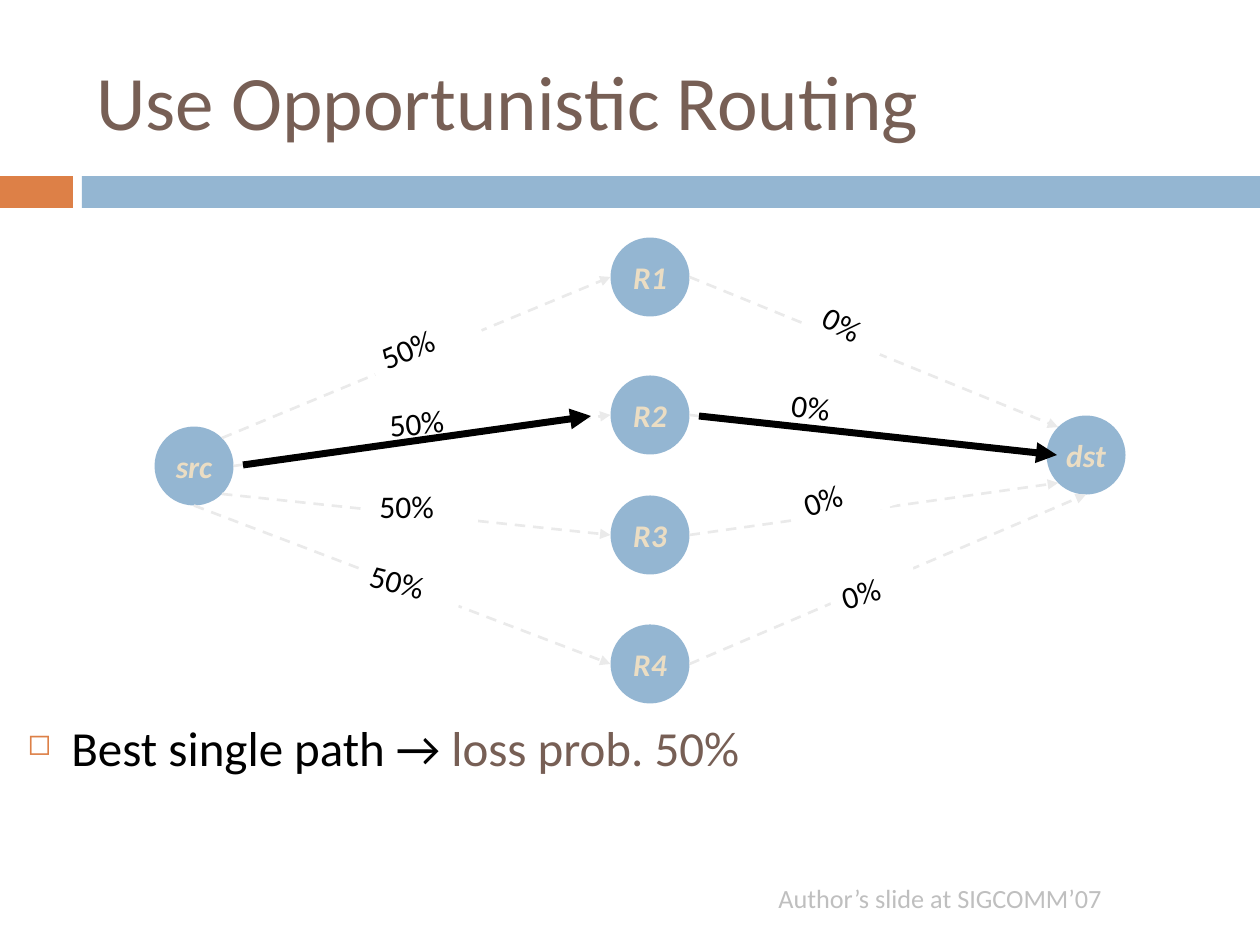
import math
from lxml import etree
from pptx import Presentation
from pptx import util as u
from pptx.dml.color import RGBColor
from pptx.enum import dml, shapes, text
from pptx.oxml.ns import qn

FONT = "Calibri"
BLUE, ORANGE, BROWN, CREAM = "94B6D2", "DD8047", "775F55", "EBDDC3"
BLACK, WHITE, PALE, GRAY = "000000", "FFFFFF", "EAEAEA", "BFBFBF"

DIAMETER = 79
LABEL_HEIGHT = 54
BARS = [(0, 73, ORANGE), (82, 1178, BLUE)]
NODES = {"src": (194, 466), "R1": (650, 277), "R2": (650, 415),
         "R3": (650, 535), "R4": (650, 664), "dst": (1086, 455)}
RELAYS = [("R1", -45, -135), ("R2", 0, 180), ("R3", 45, 135), ("R4", 90, 90)]
LOSS_LABELS = [
    ("50%", 367, 316, 115, -22.7), ("0%", 809, 302, 79, 27.7),
    ("50%", 377, 396, 105, -6), ("0%", 779, 383, 89, 7.7),
    ("50%", 367, 481, 105, 0), ("0%", 790, 465, 118, -18.9),
    ("50%", 357, 559, 105, 14.3), ("0%", 829, 564, 89, -16.5),
]
BEST_PATH = [((243, 465), (591, 416)), ((699, 416), (1057, 455))]
TITLE = [("Use Opportunistic Routing", BROWN)]
SUMMARY = [("Best single path → ", BLACK), ("loss prob. 50%", BROWN)]
CREDIT = [("Author’s slide at SIGCOMM’07", GRAY)]


def px(value):
    return u.Emu(round(value * 914400 / 126))


def color(value):
    return RGBColor.from_string(value)


def write(shape, runs, size, bold=False, italic=False, wrap=True,
          align=text.PP_ALIGN.LEFT, anchor=text.MSO_ANCHOR.TOP):
    frame = shape.text_frame
    frame.word_wrap = wrap
    frame.vertical_anchor = anchor
    paragraph = frame.paragraphs[0]
    paragraph.alignment = align
    for words, fill in runs:
        run = paragraph.add_run()
        run.text = words
        run.font.name = FONT
        run.font.size = u.Pt(size)
        run.font.bold = bold
        run.font.italic = italic
        run.font.color.rgb = color(fill)
    return paragraph


def add_shape(slide, kind, left, top, width, height, fill):
    shape = slide.shapes.add_shape(kind, px(left), px(top), px(width), px(height))
    shape.shadow.inherit = False
    shape.fill.solid()
    shape.fill.fore_color.rgb = color(fill)
    shape.line.fill.background()
    return shape


def add_textbox(slide, left, top, width, height):
    return slide.shapes.add_textbox(px(left), px(top), px(width), px(height))


def add_arrow(slide, start, end, stroke, width, dash=None):
    arrow = slide.shapes.add_connector(
        shapes.MSO_CONNECTOR.STRAIGHT, *map(px, (*start, *end)))
    arrow.line.color.rgb = color(stroke)
    arrow.line.width = u.Pt(width)
    if dash:
        arrow.line.dash_style = dash
    etree.SubElement(arrow.line._get_or_add_ln(), qn("a:tailEnd"), type="triangle")
    etree.SubElement(arrow._element.spPr, qn("a:effectLst"))


def rim(node, degrees):
    x, y = NODES[node]
    angle = math.radians(degrees)
    return x + DIAMETER / 2 * math.cos(angle), y + DIAMETER / 2 * math.sin(angle)


def add_bullet(paragraph, indent):
    properties = paragraph._p.get_or_add_pPr()
    properties.set("marL", str(px(indent)))
    properties.set("indent", str(-px(indent)))
    bullet_color = etree.SubElement(properties, qn("a:buClr"))
    etree.SubElement(bullet_color, qn("a:srgbClr"), val=ORANGE)
    etree.SubElement(properties, qn("a:buSzPct"), val="60000")
    etree.SubElement(properties, qn("a:buChar"), char="◻")


def main():
    presentation = Presentation()
    presentation.slide_width, presentation.slide_height = px(1260), px(945)
    slide = presentation.slides.add_slide(presentation.slide_layouts[6])
    rectangle, oval = shapes.MSO_SHAPE.RECTANGLE, shapes.MSO_SHAPE.OVAL
    middle = text.MSO_ANCHOR.MIDDLE

    for left, width, fill in BARS:
        add_shape(slide, rectangle, left, 176, width, 32, fill)

    for name, (x, y) in NODES.items():
        node = add_shape(slide, oval, x - DIAMETER / 2, y - DIAMETER / 2,
                         DIAMETER, DIAMETER, BLUE)
        write(node, [(name, CREAM)], 18, bold=True, italic=True, wrap=False,
              align=text.PP_ALIGN.CENTER, anchor=middle)

    for relay, leave, arrive in RELAYS:
        for start, end in ((rim("src", leave), rim(relay, 180)),
                           (rim(relay, 0), rim("dst", arrive))):
            add_arrow(slide, start, end, PALE, 1.5, dml.MSO_LINE.DASH)

    for loss, left, top, width, angle in LOSS_LABELS:
        label = add_shape(slide, rectangle, left, top, width, LABEL_HEIGHT, WHITE)
        label.rotation = angle
        write(label, [(loss, BLACK)], 18)

    for start, end in BEST_PATH:
        add_arrow(slide, start, end, BLACK, 4)

    write(add_textbox(slide, 84, 32, 1124, 136), TITLE, 44, anchor=middle)
    summary = write(add_textbox(slide, 15, 711, 1229, 193), SUMMARY, 28)
    add_bullet(summary, 44)
    write(add_textbox(slide, 766, 876, 473, 44), CREDIT, 15)

    presentation.save("out.pptx")


if __name__ == "__main__":
    main()
